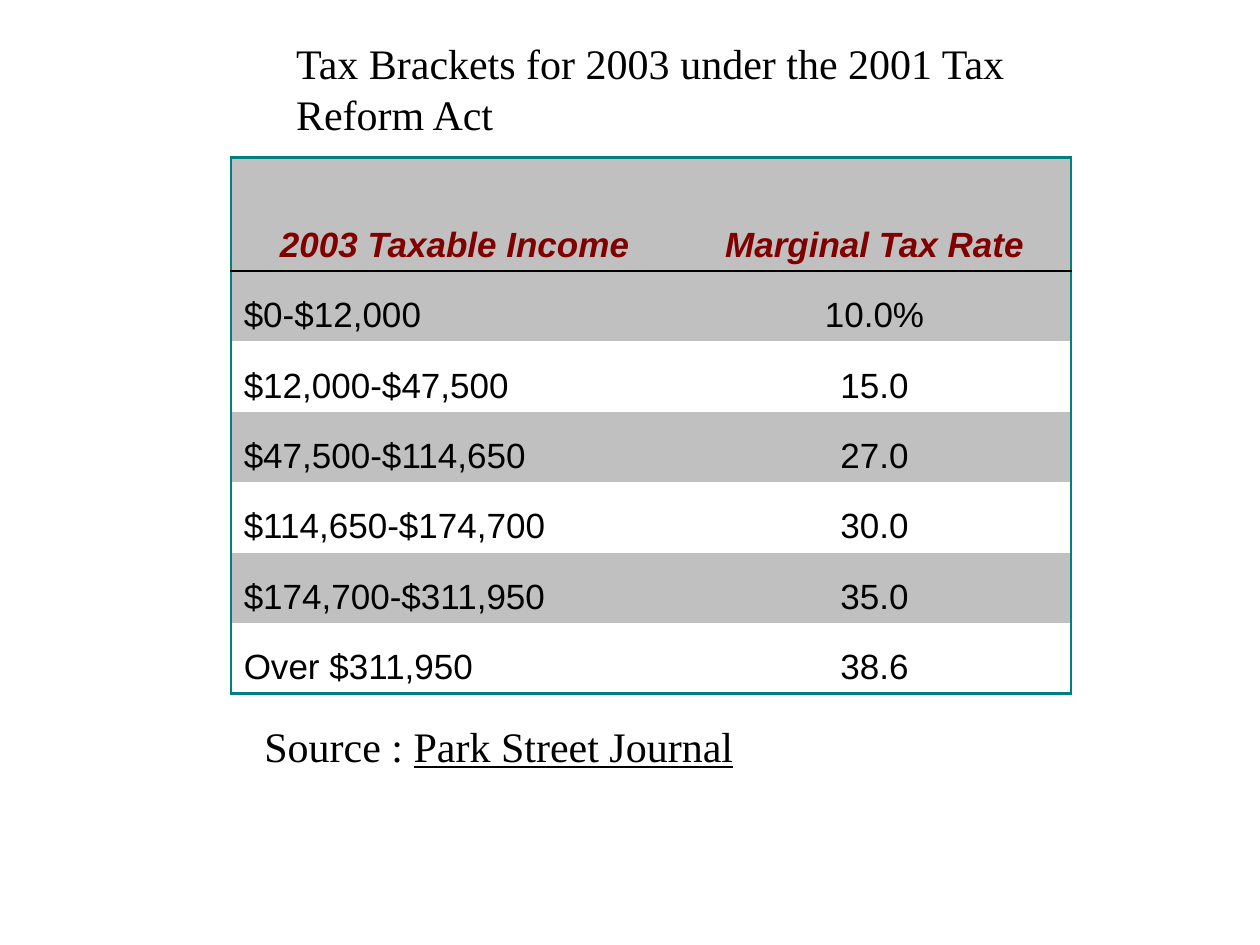
"""Build a slide with the 2003 tax brackets table."""
import pptx
import pptx.util
import pptx.dml.color
import pptx.enum.text
import pptx.oxml
import pptx.oxml.ns
from pptx.util import Cm

COLORS = {"text": "000000", "header": "800000", "band": "C0C0C0", "plain": "FFFFFF", "frame": "008080"}
TITLE_FONT = {"name": "Times New Roman", "size": pptx.util.Pt(24)}
BODY_FONT = {"name": "Arial", "size": pptx.util.Pt(20), "bold": False, "italic": False}
HEADER_FONT = {**BODY_FONT, "bold": True, "italic": True}
ALIGN = pptx.enum.text.PP_ALIGN


def add_run(paragraph, text, font_format, color="text"):
    run = paragraph.add_run()
    run.text = text
    for attribute, value in font_format.items():
        setattr(run.font, attribute, value)
    run.font.color.rgb = pptx.dml.color.RGBColor.from_string(COLORS[color])


def set_borders(cell, borders):
    properties = cell._tc.get_or_add_tcPr()
    for position, side in enumerate(("L", "R", "T", "B")):
        color, points = borders.get(side, (None, 0))
        fill = f'<a:solidFill><a:srgbClr val="{COLORS[color]}"/></a:solidFill>' if color else "<a:noFill/>"
        line = f'<a:ln{side} {pptx.oxml.ns.nsdecls("a")} w="{points * 12700}">{fill}</a:ln{side}>'
        properties.insert(position, pptx.oxml.parse_xml(line))


presentation = pptx.Presentation()
presentation.slide_width = Cm(25.4)
presentation.slide_height = Cm(19.05)
slide = presentation.slides.add_slide(presentation.slide_layouts[6])

rows = [
    ("2003 Taxable Income", "Marginal Tax Rate"),
    ("$0-$12,000", "10.0%"),
    ("$12,000-$47,500", "15.0"),
    ("$47,500-$114,650", "27.0"),
    ("$114,650-$174,700", "30.0"),
    ("$174,700-$311,950", "35.0"),
    ("Over $311,950", "38.6"),
]
last = len(rows) - 1
table = slide.shapes.add_table(len(rows), 2, Cm(4.66), Cm(3.18), Cm(16.93), Cm(10.8)).table
for column, width in zip(table.columns, (9.01, 7.92)):
    column.width = Cm(width)

for row_index, row in enumerate(rows):
    is_header = row_index == 0
    table.rows[row_index].height = Cm(2.28 if is_header else 1.42)
    for column_index, text in enumerate(row):
        cell = table.cell(row_index, column_index)
        cell.vertical_anchor = pptx.enum.text.MSO_ANCHOR.BOTTOM
        cell.fill.solid()
        fill = "band" if is_header or row_index % 2 else "plain"
        cell.fill.fore_color.rgb = pptx.dml.color.RGBColor.from_string(COLORS[fill])
        paragraph = cell.text_frame.paragraphs[0]
        paragraph.alignment = ALIGN.CENTER if is_header or column_index else ALIGN.LEFT
        add_run(paragraph, text, HEADER_FONT if is_header else BODY_FONT, "header" if is_header else "text")
        borders = {"R" if column_index else "L": ("frame", 1)}
        if is_header:
            borders.update({"T": ("frame", 2), "B": ("text", 1)})
        elif row_index == 1:
            borders["T"] = ("text", 1)
        elif row_index == last:
            borders["B"] = ("frame", 2)
        set_borders(cell, borders)

captions = [
    ((5.72, 0.64, 15.44, 2.29), [("Tax Brackets for 2003 under the 2001 Tax Reform Act", {})]),
    ((5.08, 14.4, 13.34, 1.27), [("Source : ", {}), ("Park Street Journal", {"underline": True})]),
]
for box, runs in captions:
    frame = slide.shapes.add_textbox(*map(Cm, box)).text_frame
    frame.word_wrap = True
    frame.auto_size = pptx.enum.text.MSO_AUTO_SIZE.SHAPE_TO_FIT_TEXT
    paragraph = frame.paragraphs[0]
    paragraph.space_before = pptx.util.Pt(12)
    for text, extra in runs:
        add_run(paragraph, text, {**TITLE_FONT, **extra})

presentation.save("out.pptx")
